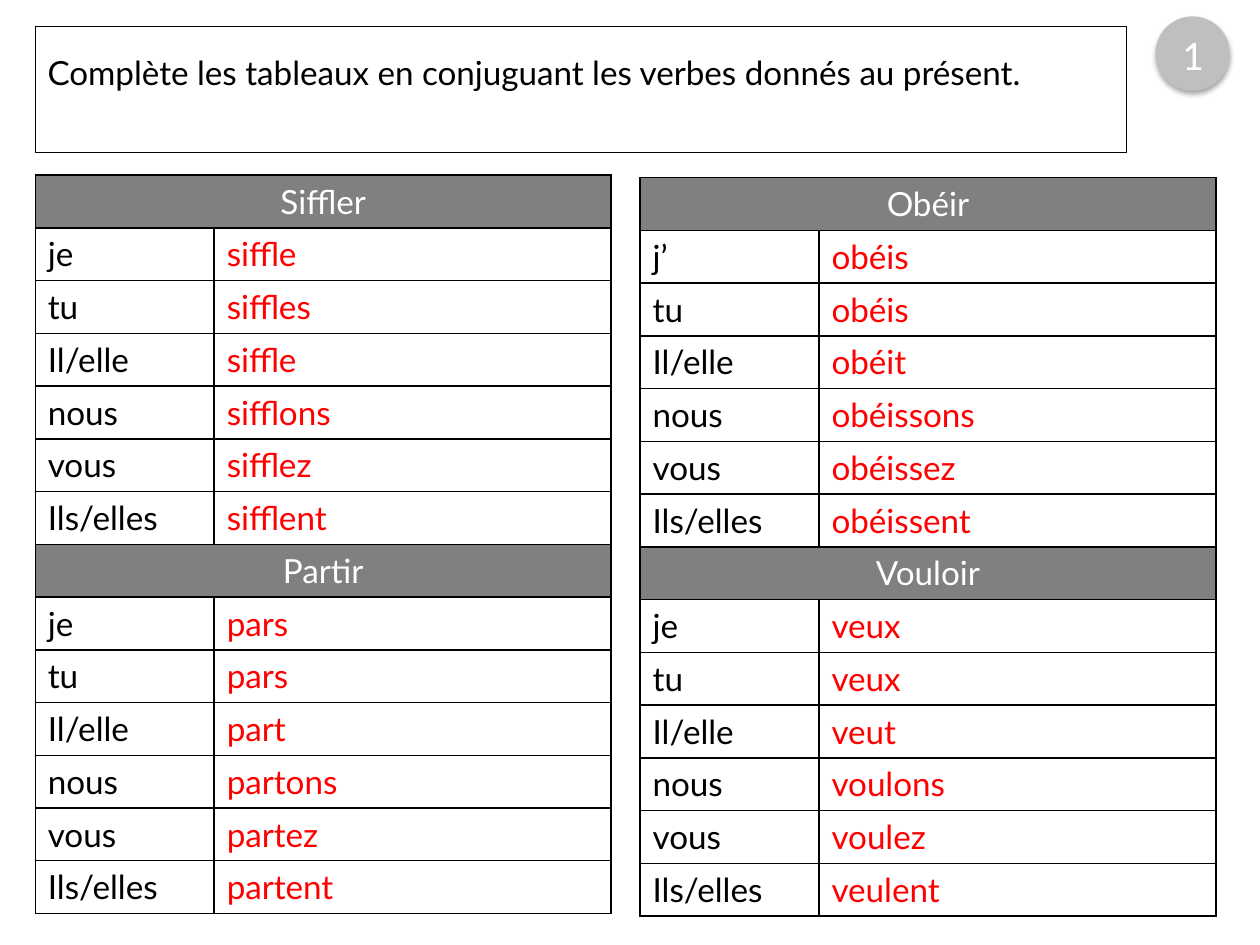
import dataclasses

import pptx
import pptx.dml.color
import pptx.enum.shapes
import pptx.enum.text
import pptx.oxml
import pptx.oxml.ns
import pptx.util

Inches = pptx.util.Inches
SHAPE = pptx.enum.shapes.MSO_SHAPE
ALIGN = pptx.enum.text.PP_ALIGN
ANCHOR = pptx.enum.text.MSO_ANCHOR
NS = pptx.oxml.ns.nsdecls("a")


@dataclasses.dataclass(frozen=True)
class Theme:
    ink: str = "000000"
    paper: str = "FFFFFF"
    answer: str = "FF0000"
    header: str = "808080"
    badge: str = "BFBFBF"
    font: str = "Lato"
    badge_font: str = "Calibri"
    size: int = 19
    badge_size: int = 24


def rgb(value):
    return pptx.dml.color.RGBColor.from_string(value)


class Worksheet:
    """Draws the elements of a conjugation worksheet on one slide."""

    def __init__(self, slide, theme):
        self.slide = slide
        self.theme = theme

    def set_text(self, tf, text, color, align=ALIGN.LEFT, font=None, size=None):
        tf.text = text
        p = tf.paragraphs[0]
        p.alignment = align
        r = p.runs[0]
        r.font.name = font or self.theme.font
        r.font.size = pptx.util.Pt(size or self.theme.size)
        r.font.bold = False
        r.font.color.rgb = rgb(color)
        return p

    def badge(self, text, left, top, size):
        t = self.theme
        sp = self.slide.shapes.add_shape(
            SHAPE.OVAL, Inches(left), Inches(top), Inches(size), Inches(size))
        sp.fill.solid()
        sp.fill.fore_color.rgb = rgb(t.badge)
        sp.line.fill.background()
        sp.shadow.inherit = False
        effects = sp._element.spPr.find(pptx.oxml.ns.qn("a:effectLst"))
        effects.append(pptx.oxml.parse_xml(
            f'<a:outerShdw {NS} blurRad="{pptx.util.Pt(3.1)}" dist="{pptx.util.Pt(1.8)}" '
            f'dir="5400000" rotWithShape="0"><a:srgbClr val="{t.ink}">'
            '<a:alpha val="35000"/></a:srgbClr></a:outerShdw>'))
        sp.text_frame.vertical_anchor = ANCHOR.MIDDLE
        self.set_text(sp.text_frame, text, t.paper, ALIGN.CENTER, t.badge_font, t.badge_size)

    def instruction(self, text, left, top, width, height):
        sp = self.slide.shapes.add_textbox(
            Inches(left), Inches(top), Inches(width), Inches(height))
        sp.line.color.rgb = rgb(self.theme.ink)
        sp.line.width = pptx.util.Pt(0.25)
        sp.text_frame.word_wrap = True
        p = self.set_text(sp.text_frame, text, self.theme.ink)
        p.line_spacing = 1.5

    def style_cell(self, cell, fill):
        tcPr = cell._tc.get_or_add_tcPr()
        for side in ("lnL", "lnR", "lnT", "lnB"):
            tcPr.append(pptx.oxml.parse_xml(
                f'<a:{side} {NS} w="{pptx.util.Pt(1)}"><a:solidFill>'
                f'<a:srgbClr val="{self.theme.ink}"/></a:solidFill></a:{side}>'))
        cell.fill.solid()
        cell.fill.fore_color.rgb = rgb(fill)

    def conjugation(self, verb, pronouns, forms, left, top, widths, height):
        t = self.theme
        count = len(forms) + 1
        table = self.slide.shapes.add_table(
            count, 2, Inches(left), Inches(top), Inches(sum(widths)), Inches(height)).table
        table.first_row = False
        table.horz_banding = False
        for column, width in zip(table.columns, widths):
            column.width = Inches(width)
        for i, row in enumerate(table.rows):
            row.height = Inches(height / count)
            for cell in row.cells:
                self.style_cell(cell, t.paper if i else t.header)
        table.cell(0, 0).merge(table.cell(0, 1))
        self.set_text(table.cell(0, 0).text_frame, verb, t.paper, ALIGN.CENTER)
        for i, (pronoun, form) in enumerate(zip(pronouns, forms), 1):
            self.set_text(table.cell(i, 0).text_frame, pronoun, t.ink)
            self.set_text(table.cell(i, 1).text_frame, form, t.answer)


def main():
    prs = pptx.Presentation()
    prs.slide_width = Inches(10)
    prs.slide_height = Inches(7.5)
    s = prs.slides.add_slide(prs.slide_layouts[6])
    sheet = Worksheet(s, Theme())

    sheet.badge("1", 9.17, 0.13, 0.59)
    sheet.instruction("Complète les tableaux en conjuguant les verbes donnés au présent.",
                      0.28, 0.21, 8.66, 1)

    others = ["tu", "Il/elle", "nous", "vous", "Ils/elles"]
    table_height = 2.93
    columns = [
        (0.28, 1.39, [
            ("Siffler", "je", "siffle siffles siffle sifflons sifflez sifflent"),
            ("Partir", "je", "pars pars part partons partez partent")]),
        (5.08, 1.41, [
            ("Obéir", "j’", "obéis obéis obéit obéissons obéissez obéissent"),
            ("Vouloir", "je", "veux veux veut voulons voulez veulent")]),
    ]
    for left, top, verbs in columns:
        for i, (verb, first, forms) in enumerate(verbs):
            sheet.conjugation(verb, [first] + others, forms.split(), left,
                              top + i * table_height, (1.42, 3.15), table_height)
    prs.save("out.pptx")


if __name__ == "__main__":
    main()
